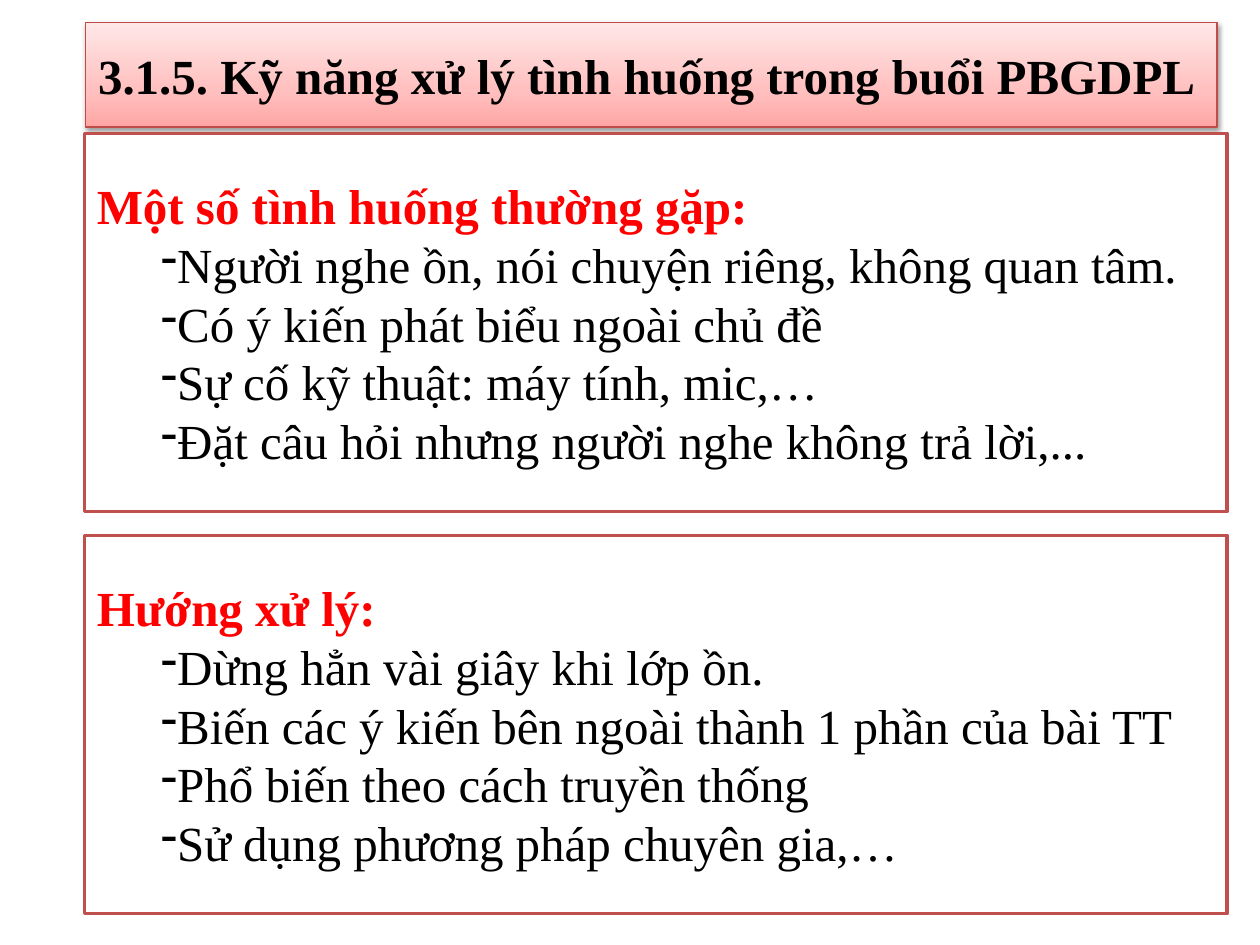
from lxml import etree
from copy import deepcopy
from pptx import Presentation
from pptx.dml.color import RGBColor
from pptx.enum.shapes import MSO_SHAPE
from pptx.enum.text import MSO_ANCHOR, PP_ALIGN
from pptx.oxml.ns import qn
from pptx.util import Inches, Pt

RECT = MSO_SHAPE.RECTANGLE
MIDDLE = MSO_ANCHOR.MIDDLE
JUSTIFY = PP_ALIGN.JUSTIFY
color = RGBColor.from_string

prs = Presentation()
prs.slide_width, prs.slide_height = Inches(10), Inches(7.5)
slide = prs.slides.add_slide(prs.slide_layouts[6])


def add_box(x, y, w, h, line, width):
    box = slide.shapes.add_shape(RECT, Inches(x), Inches(y), Inches(w), Inches(h))
    box.shadow.inherit = False
    box.line.color.rgb = color(line)
    box.line.width = Pt(width)
    box.text_frame.word_wrap = True
    box.text_frame.vertical_anchor = MIDDLE
    return box


def style(para, text, ink, bold):
    para.text = text
    para.alignment = JUSTIFY
    para.font.name = "Times New Roman"
    para.font.size = Pt(28)
    para.font.bold = bold
    para.font.color.rgb = color(ink)


# Title bar: gradient running upward, with a soft shadow below
title = add_box(0.68, 0.18, 8.98, 0.83, "BF4C48", 0.75)
style(title.text_frame.paragraphs[0],
      "3.1.5. Kỹ năng xử lý tình huống trong buổi PBGDPL", "000000", True)
fill = title.fill
fill.gradient()
fill.gradient_angle = 90
stops = title._element.spPr.find(qn("a:gradFill")).find(qn("a:gsLst"))
stops.insert(1, deepcopy(stops[0]))
for stop, (place, tint) in zip(
        fill.gradient_stops, [(0, "FFA6A5"), (0.35, "FFC0BF"), (1, "FFE7E7")]):
    stop.position = place
    stop.color.rgb = color(tint)

effects = title._element.spPr.find(qn("a:effectLst"))
shadow = etree.SubElement(effects, qn("a:outerShdw"), blurRad=str(Pt(3.1)),
                          dist=str(Pt(1.6)), dir="5400000", rotWithShape="0")
black = etree.SubElement(shadow, qn("a:srgbClr"), val="000000")
etree.SubElement(black, qn("a:alpha"), val="38000")

# Two panels: a red heading over dashed points
panels = [
    (1.06, "Một số tình huống thường gặp:", [
        "Người nghe ồn, nói chuyện riêng, không quan tâm.",
        "Có ý kiến phát biểu ngoài chủ đề",
        "Sự cố kỹ thuật: máy tính, mic,…",
        "Đặt câu hỏi nhưng người nghe không trả lời,...",
    ]),
    (4.25, "Hướng xử lý:", [
        "Dừng hẳn vài giây khi lớp ồn.",
        "Biến các ý kiến bên ngoài thành 1 phần của bài TT",
        "Phổ biến theo cách truyền thống",
        "Sử dụng phương pháp chuyên gia,…",
    ]),
]
for top, head, points in panels:
    panel = add_box(0.67, top, 9.07, 3, "C0504D", 2)
    panel.fill.solid()
    panel.fill.fore_color.rgb = color("FFFFFF")
    frame = panel.text_frame
    style(frame.paragraphs[0], head, "FF0000", True)
    for point in points:
        para = frame.add_paragraph()
        style(para, point, "000000", False)
        props = para._p.get_or_add_pPr()
        props.set("marL", "0")
        props.set("indent", str(Inches(0.51)))
        props.insert(0, etree.Element(qn("a:buFontTx")))
        props.insert(1, etree.Element(qn("a:buChar"), char="-"))

prs.save("out.pptx")
